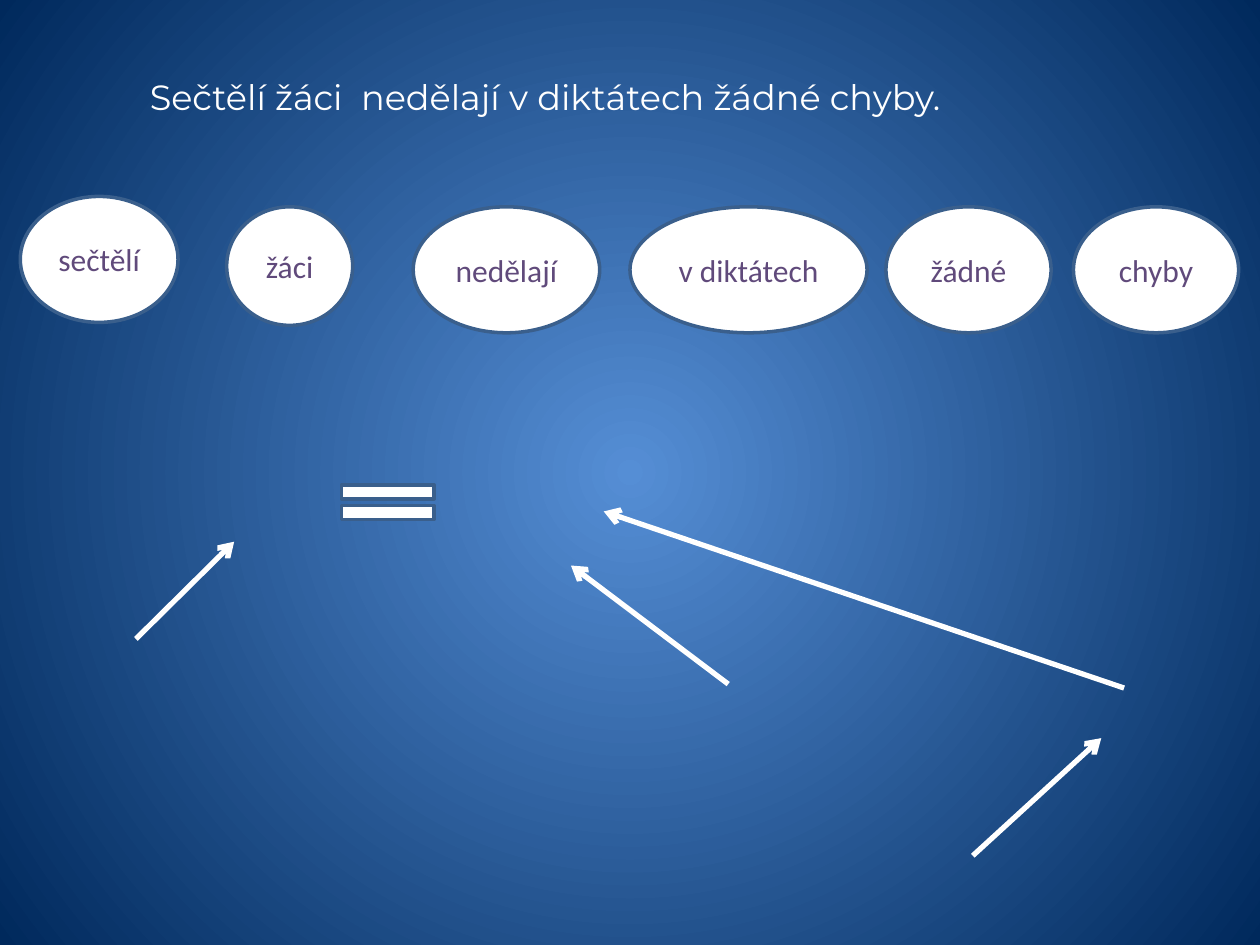
from lxml import etree
from pptx import Presentation
from pptx.dml.color import RGBColor
from pptx.enum import shapes, text
from pptx.oxml import ns, parse_xml
from pptx.util import Cm, Pt

WHITE = RGBColor(0xFF, 0xFF, 0xFF)
PURPLE = RGBColor(0x60, 0x4A, 0x7B)
EDGE = RGBColor(0x3A, 0x5F, 0x8C)
GLOW = RGBColor(0x55, 0x8E, 0xD5)
NAVY = RGBColor(0x00, 0x29, 0x5C)

TITLE = "Sečtělí žáci  nedělají v diktátech žádné chyby."
TOP, HIGH = 4.17, 2.54
WORDS = [
    ("sečtělí", 0.41, 3.96, 3.18, HIGH),
    ("žáci", 4.57, TOP, 2.54, 2.39),
    ("nedělají", 8.33, TOP, 3.76, HIGH),
    ("v diktátech", 12.7, TOP, 4.78, HIGH),
    ("žádné", 17.86, TOP, 3.33, HIGH),
    ("chyby", 21.64, TOP, 3.33, HIGH),
]
EQUAL = (6.55, 9.53, 2.54, 1.19)
ARROWS = [
    (14.68, 13.79, 11.51, 11.4),
    (22.66, 13.87, 12.17, 10.31),
    (19.61, 17.25, 22.2, 14.88),
    (2.74, 12.88, 4.72, 10.92),
]
RADIAL = (
    f'<a:path {ns.nsdecls("a")} path="circle">'
    '<a:fillToRect l="50000" t="50000" r="50000" b="50000"/></a:path>'
)


def lengths(nums):
    return [Cm(n) for n in nums]


def paint(slide):
    fill = slide.background.fill
    fill.gradient()
    for stop, color, place in zip(fill.gradient_stops, (GLOW, NAVY), (0, 1)):
        stop.color.rgb = color
        stop.position = place
    lin = next(slide._element.iter(ns.qn("a:lin")))
    lin.getparent().replace(lin, parse_xml(RADIAL))


def write(frame, words, font, size, color):
    run = frame.paragraphs[0].add_run()
    run.text = words
    run.font.name = font
    run.font.size = Pt(size)
    run.font.color.rgb = color


def add_form(slide, kind, box):
    form = slide.shapes.add_shape(kind, *lengths(box))
    form.shadow.inherit = False
    form.fill.solid()
    form.fill.fore_color.rgb = WHITE
    form.line.color.rgb = EDGE
    form.line.width = Pt(2)
    return form


def add_word(slide, word, *box):
    frame = add_form(slide, shapes.MSO_SHAPE.OVAL, box).text_frame
    frame.word_wrap = False
    frame.vertical_anchor = text.MSO_ANCHOR.MIDDLE
    frame.paragraphs[0].alignment = text.PP_ALIGN.CENTER
    write(frame, word, "Calibri", 18, PURPLE)


def add_arrow(slide, ends):
    arrow = slide.shapes.add_connector(
        shapes.MSO_CONNECTOR.STRAIGHT, *lengths(ends)
    )
    arrow.line.color.rgb = WHITE
    arrow.line.width = Pt(3)
    etree.SubElement(arrow.line._get_or_add_ln(), ns.qn("a:tailEnd"), type="arrow")
    etree.SubElement(arrow._element.spPr, ns.qn("a:effectLst"))


def main():
    deck = Presentation()
    deck.slide_width, deck.slide_height = lengths((25.4, 19.05))
    slide = deck.slides.add_slide(deck.slide_layouts[6])
    paint(slide)
    frame = slide.shapes.add_textbox(*lengths((2.77, 1.4, 19.46, 1.12))).text_frame
    frame.word_wrap = True
    frame.auto_size = text.MSO_AUTO_SIZE.SHAPE_TO_FIT_TEXT
    write(frame, TITLE, "Montserrat", 20, WHITE)
    for word in WORDS:
        add_word(slide, *word)
    add_form(slide, shapes.MSO_SHAPE.MATH_EQUAL, EQUAL)
    for ends in ARROWS:
        add_arrow(slide, ends)
    deck.save("out.pptx")


if __name__ == "__main__":
    main()
